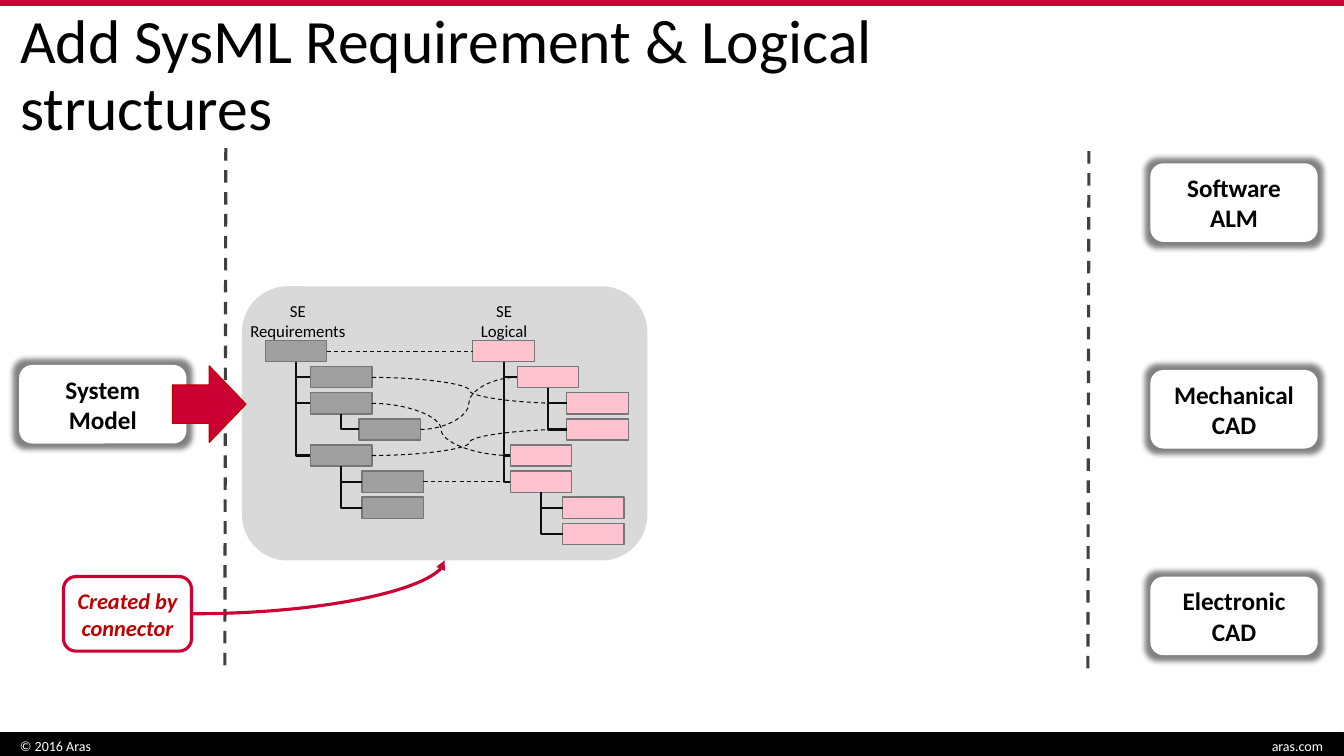
from pptx import Presentation
from pptx.dml.color import RGBColor
from pptx.enum.dml import MSO_LINE
from pptx.enum.shapes import MSO_CONNECTOR as CONNECTOR, MSO_SHAPE as SHAPE
from pptx.enum.text import MSO_ANCHOR as ANCHOR, MSO_AUTO_SIZE as AUTO_SIZE, PP_ALIGN as ALIGN
from pptx.oxml import parse_xml
from pptx.oxml.ns import nsdecls, qn
from pptx.util import Inches, Pt

RED, BLACK, WHITE = "CC0033", "000000", "FFFFFF"
GREY, PINK, INK = "A0A0A0", "FFC2D1", "0D0D0D"
TOP, LEFT, BOTTOM, RIGHT = 0, 1, 2, 3

# Tree nodes, one per row: left edge and row of the parent
TREE_TOP, ROW_PITCH = 3.38, 1.81 / 7
REQUIREMENTS = [(2.63, None), (3.08, 0), (3.08, 0), (3.56, 2),
                (3.08, 0), (3.59, 4), (3.59, 4)]
LOGICAL = [(4.69, None), (5.13, 0), (5.62, 1), (5.62, 1),
           (5.06, 0), (5.06, 0), (5.58, 5), (5.58, 5)]
# Requirement row -> logical row
TRACES = [(0, 0), (1, 2), (2, 4), (3, 1), (4, 3), (5, 5)]
TOOLS = ["Software ALM", "Mechanical CAD", "Electronic CAD"]


def color(hex_value):
    return RGBColor.from_string(hex_value)


def set_text(shape, text, size, hex_value, align=ALIGN.CENTER, inset=0.1,
             bold=False, italic=False):
    frame = shape.text_frame
    frame.text = text
    frame.word_wrap = True
    frame.auto_size = AUTO_SIZE.NONE
    frame.vertical_anchor = ANCHOR.MIDDLE
    frame.margin_left = frame.margin_right = Inches(inset)
    frame.margin_top = frame.margin_bottom = Inches(0.05)
    for paragraph in frame.paragraphs:
        paragraph.alignment = align
        for run in paragraph.runs:
            font = run.font
            font.name, font.size = "Calibri", Pt(size)
            font.bold, font.italic = bold, italic
            font.color.rgb = color(hex_value)


def add_block(slide, kind, box, fill=None, line=None, line_width=0.85):
    block = slide.shapes.add_shape(kind, *map(Inches, box))
    block.shadow.inherit = False
    if fill:
        block.fill.solid()
        block.fill.fore_color.rgb = color(fill)
    else:
        block.fill.background()
    if line:
        block.line.color.rgb = color(line)
        block.line.width = Pt(line_width)
    else:
        block.line.fill.background()
    return block


def add_label(slide, box, text, size, hex_value, **style):
    label = slide.shapes.add_textbox(*map(Inches, box))
    set_text(label, text, size, hex_value, **style)


def add_system(slide, left, top, text):
    """White rounded box with a soft grey halo."""
    system = add_block(slide, SHAPE.ROUNDED_RECTANGLE, (left, top, 1.66, 0.78), WHITE)
    set_text(system, text, 18, BLACK, bold=True)
    effects = system.element.spPr.find(qn("a:effectLst"))
    effects.append(parse_xml(
        f'<a:glow {nsdecls("a")} rad="101600"><a:srgbClr val="000000">'
        '<a:alpha val="50000"/></a:srgbClr></a:glow>'))


def style_connector(connector, hex_value, width, dash=None):
    connector.line.color.rgb = color(hex_value)
    connector.line.width = Pt(width)
    if dash:
        connector.line.dash_style = dash
    connector.element.spPr.append(parse_xml(f'<a:effectLst {nsdecls("a")}/>'))


def add_boundary(slide, x1, y1, x2, y2):
    boundary = slide.shapes.add_connector(
        CONNECTOR.STRAIGHT, *map(Inches, (x1, y1, x2, y2)))
    style_connector(boundary, "404040", 2.25, MSO_LINE.DASH)


def add_curve(slide, source, source_site, target, target_site):
    curve = slide.shapes.add_connector(CONNECTOR.CURVE, 0, 0, 0, 0)
    curve.begin_connect(source, source_site)
    curve.end_connect(target, target_site)
    return curve


def add_branch(slide, parent, child):
    """One-bend line from the parent's bottom down, then right to the child."""
    x1, y1 = parent.left + parent.width // 2, parent.top + parent.height
    x2, y2 = child.left, child.top + child.height // 2
    run, drop = x2 - x1, y2 - y1
    branch = slide.shapes.add_connector(CONNECTOR.ELBOW, x1, y1, x2, y2)
    branch.begin_connect(parent, BOTTOM)
    branch.end_connect(child, LEFT)
    # The one-bend shape goes right then down, so it is turned and mirrored
    branch.left, branch.top = (x1 + x2 - drop) // 2, (y1 + y2 - run) // 2
    branch.width, branch.height = drop, run
    properties = branch.element.spPr
    properties.find(qn("a:prstGeom")).set("prst", "bentConnector2")
    transform = properties.find(qn("a:xfrm"))
    transform.set("rot", "16200000")
    transform.set("flipH", "1")
    style_connector(branch, INK, 1.5)


def add_tree(slide, rows, fill):
    nodes = [add_block(slide, SHAPE.RECTANGLE,
                       (left, TREE_TOP + row * ROW_PITCH, 0.61, 0.21), fill, "767676")
             for row, (left, _) in enumerate(rows)]
    for node, (_, parent) in zip(nodes, rows):
        if parent is not None:
            add_branch(slide, nodes[parent], node)
    return nodes


def main():
    deck = Presentation()
    deck.slide_width, deck.slide_height = Inches(13.33), Inches(7.5)
    slide = deck.slides.add_slide(deck.slide_layouts[5])

    # Page bands, title and footer
    add_block(slide, SHAPE.RECTANGLE, (-0.01, 7.27, 13.33, 0.25), BLACK, BLACK)
    add_block(slide, SHAPE.RECTANGLE, (0, 0, 13.33, 0.05), RED, RED)
    title = slide.shapes.title
    title.left, title.top, title.width, title.height = map(Inches, (0, 0, 11.04, 1.53))
    set_text(title, "Add SysML Requirement & Logical structures", 44, BLACK,
             align=ALIGN.LEFT)
    title.text_frame.margin_left = Inches(0.2)
    title.text_frame.paragraphs[0].line_spacing = 0.9
    add_label(slide, (9.11, 7.27, 4.11, 0.25), "aras.com", 10, WHITE, align=ALIGN.RIGHT)
    add_label(slide, (0.1, 7.27, 4.1, 0.25), "© 2016 Aras", 10, WHITE, align=ALIGN.LEFT)

    # Boundaries and the structure panel
    add_boundary(slide, 2.24, 1.47, 2.23, 6.63)
    add_boundary(slide, 10.8, 1.5, 10.79, 6.65)
    panel = add_block(slide, SHAPE.ROUNDED_RECTANGLE, (2.4, 2.84, 4.02, 2.72), "D9D9D9")

    # Requirement and logical trees with their traces
    requirements = add_tree(slide, REQUIREMENTS, GREY)
    logical = add_tree(slide, LOGICAL, PINK)
    add_label(slide, (2.38, 3.02, 1.15, 0.33), "SE Requirements", 12, BLACK, inset=0.05)
    add_label(slide, (4.57, 3.02, 0.86, 0.33), "SE\nLogical", 12, BLACK)
    for requirement_row, logical_row in TRACES:
        trace = add_curve(slide, requirements[requirement_row], RIGHT,
                          logical[logical_row], LEFT)
        style_connector(trace, INK, 0.75, MSO_LINE.DASH)

    # Note pointing at the panel
    note = add_block(slide, SHAPE.ROUNDED_RECTANGLE, (0.63, 5.72, 1.27, 0.74),
                     line=RED, line_width=2.25)
    set_text(note, "Created by connector", 16, "C00000", inset=0.05,
             bold=True, italic=True)
    pointer = add_curve(slide, note, RIGHT, panel, BOTTOM)
    pointer.element.spPr.find(qn("a:prstGeom")).set("prst", "curvedConnector2")
    style_connector(pointer, RED, 2.25)
    pointer.element.spPr.find(qn("a:ln")).append(
        parse_xml(f'<a:tailEnd {nsdecls("a")} type="triangle"/>'))

    # Source model and the surrounding tools
    add_system(slide, 0.19, 3.62, "System Model")
    add_block(slide, SHAPE.RIGHT_ARROW, (1.71, 3.63, 0.73, 0.76), RED, "C00000")
    for position, tool in enumerate(TOOLS):
        add_system(slide, 11.41, 1.62 + 2.05 * position, tool)

    deck.save("out.pptx")


if __name__ == "__main__":
    main()
